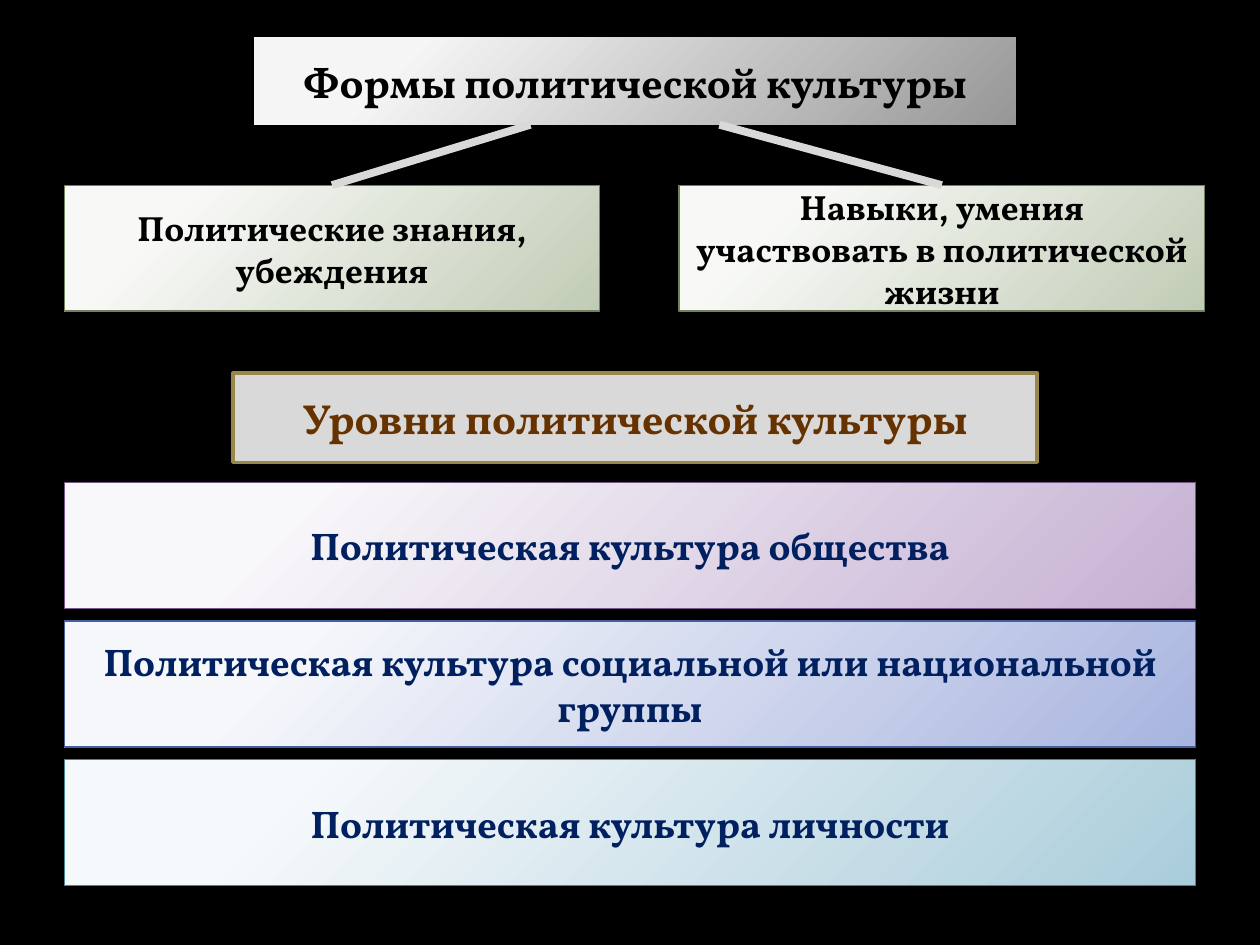
from lxml.etree import SubElement
from pptx import Presentation
from pptx.dml.color import RGBColor
from pptx.enum.shapes import MSO_CONNECTOR, MSO_SHAPE
from pptx.enum.text import MSO_ANCHOR, PP_ALIGN
from pptx.oxml.ns import qn
from pptx.util import Inches, Pt

FONT = "Vollkorn"
INK = {"black": "000000", "brown": "663300", "navy": "002060", "pale": "D9D9D9"}
# Box styles: fill colours (two make a gradient), line colour, line width
STYLES = {
    "gray": (("F5F5F5", "979797"), "000000", 0.75),
    "green": (("F8F9F7", "C1CCB5"), "72825E", 0.75),
    "gold": (("D9D9D9",), "98894B", 2),
    "violet": (("F8F7FA", "C5B0D2"), "77568A", 0.75),
    "blue": (("F6F7FB", "A8B5DF"), "465F9A", 0.75),
    "teal": (("F6F9FB", "AACDDB"), "4A8296", 0.75),
}

# Content
FORMS = "Формы политической культуры"
KINDS = [
    ("Политические знания, убеждения", 0.51, 4.25, 4.21),
    ("Навыки, умения участвовать в политической жизни", 5.39, 4.17, 5.71),
]  # text, left, width, start of its link
TIERS = "Уровни политической культуры"
LEVELS = [
    ("Политическая культура общества", "violet"),
    ("Политическая культура социальной или национальной группы", "blue"),
    ("Политическая культура личности", "teal"),
]
KIND_TOP, LEVEL_TOP, STEP = 1.47, 3.83, 1.1


def rgb(code):
    return RGBColor.from_string(code)


def paint(fill, colors):
    if len(colors) == 1:
        fill.solid()
        fill.fore_color.rgb = rgb(colors[0])
        return
    fill.gradient()
    for stop, color, pos in zip(fill.gradient_stops, colors, (0.2, 1)):
        stop.color.rgb = rgb(color)
        stop.position = pos


def make_round(shape):
    """Turn a linear gradient into a circular one centred off the top left."""
    grad = shape._element.spPr.find(qn("a:gradFill"))
    grad.remove(grad.find(qn("a:lin")))
    ring = SubElement(grad, qn("a:path"), {"path": "circle"})
    SubElement(ring, qn("a:fillToRect"),
               {"l": "-15000", "t": "-15000", "r": "115000", "b": "115000"})


def add_box(slide, text, rect, style, size, ink):
    colors, edge, width = STYLES[style]
    box = slide.shapes.add_shape(MSO_SHAPE.RECTANGLE, *map(Inches, rect))
    box.shadow.inherit = False
    paint(box.fill, colors)
    if len(colors) > 1:
        make_round(box)
    box.line.color.rgb = rgb(edge)
    box.line.width = Pt(width)
    frame = box.text_frame
    frame.word_wrap = True
    frame.vertical_anchor = MSO_ANCHOR.MIDDLE
    frame.text = text
    para = frame.paragraphs[0]
    para.alignment = PP_ALIGN.CENTER
    font = para.runs[0].font
    font.name, font.size, font.bold = FONT, Pt(size), True
    font.color.rgb = rgb(INK[ink])


def add_link(slide, *ends):
    link = slide.shapes.add_connector(MSO_CONNECTOR.STRAIGHT, *map(Inches, ends))
    link.line.color.rgb = rgb(INK["pale"])
    link.line.width = Pt(4.5)
    SubElement(link._element.spPr, qn("a:effectLst"))


def main():
    deck = Presentation()
    deck.slide_width, deck.slide_height = Inches(10), Inches(7.5)
    slide = deck.slides.add_slide(deck.slide_layouts[6])
    paint(slide.background.fill, [INK["black"]])

    # Forms
    add_box(slide, FORMS, (2.01, 0.29, 6.06, 0.71), "gray", 24, "black")
    for text, left, width, _ in KINDS:
        add_box(slide, text, (left, KIND_TOP, width, 1), "green", 20, "black")

    # Levels
    add_box(slide, TIERS, (1.85, 2.96, 6.38, 0.71), "gold", 24, "brown")
    for row, (text, style) in enumerate(LEVELS):
        rect = (0.51, LEVEL_TOP + row * STEP, 8.98, 1)
        add_box(slide, text, rect, style, 22, "navy")

    # Links from the heading to the middle of each form
    for _, left, width, start in KINDS:
        add_link(slide, start, 0.99, left + width / 2, KIND_TOP)

    deck.save("out.pptx")


if __name__ == "__main__":
    main()
